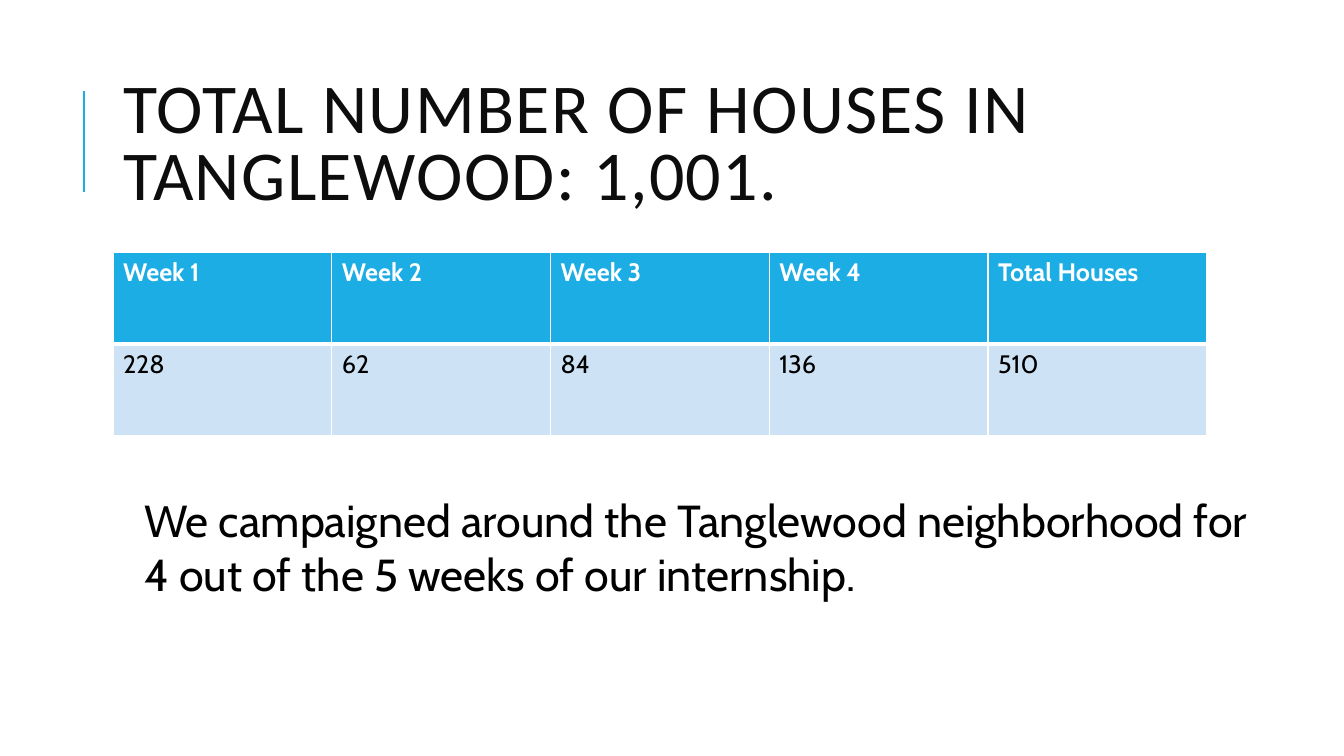
from lxml.etree import SubElement
from pptx import Presentation
from pptx.dml.color import RGBColor
from pptx.enum.shapes import MSO_CONNECTOR
from pptx.enum.text import MSO_ANCHOR, MSO_AUTO_SIZE, PP_ALIGN
from pptx.oxml.ns import qn
from pptx.util import Inches, Pt

HEAD = "Total number of houses in Tanglewood: 1,001.".upper()
NOTE = ("We campaigned around the Tanglewood neighborhood "
        "for 4 out of the 5 weeks of our internship.")
ROWS = [
    ["Week 1", "Week 2", "Week 3", "Week 4", "Total Houses"],
    ["228", "62", "84", "136", "510"],
]
BLUE = RGBColor(0x1C, 0xAD, 0xE4)
PALE = RGBColor(0xCD, 0xE3, 0xF5)
WHITE = RGBColor(0xFF, 0xFF, 0xFF)
BLACK = RGBColor(0, 0, 0)
INK = RGBColor(0x0D, 0x0D, 0x0D)
LOOKS = [
    (BLUE, WHITE, True, {"L": 1, "R": 1, "T": 1, "B": 3}),
    (PALE, BLACK, False, {"L": 1, "R": 1, "T": 3, "B": 1}),
]
WIDE, HIGH = 2.17, 0.91


def style(para, face, size, color, bold=False):
    font = para.font
    font.name, font.size, font.bold = face, Pt(size), bold
    font.color.rgb = color


def edge(cell, sides):
    props = cell._tc.get_or_add_tcPr()
    for side, width in sides.items():
        line = SubElement(props, qn(f"a:ln{side}"), w=str(Pt(width)))
        fill = SubElement(line, qn("a:solidFill"))
        SubElement(fill, qn("a:srgbClr"), val=str(WHITE))


def add_head(slide):
    rule = slide.shapes.add_connector(
        MSO_CONNECTOR.STRAIGHT,
        Inches(0.83), Inches(1.9), Inches(0.83), Inches(0.9))
    rule.line.color.rgb = BLUE
    rule.line.width = Pt(1.5)
    SubElement(rule._element.spPr, qn("a:effectLst"))

    title = slide.shapes.title
    title.left, title.top = Inches(1.12), Inches(0.64)
    title.width, title.height = Inches(10.63), Inches(1.64)
    frame = title.text_frame
    frame.text = HEAD
    frame.word_wrap = True
    frame.auto_size = MSO_AUTO_SIZE.NONE
    frame.vertical_anchor = MSO_ANCHOR.MIDDLE
    para = frame.paragraphs[0]
    para.alignment = PP_ALIGN.LEFT
    para.line_spacing = 0.8
    style(para, "Calibri", 50, INK)
    para.runs[0]._r.get_or_add_rPr().set("spc", "100")


def add_grid(slide):
    count = len(ROWS[0])
    table = slide.shapes.add_table(
        len(ROWS), count, Inches(1.12), Inches(2.5),
        Inches(WIDE * count), Inches(HIGH * len(ROWS))).table
    for r, (row, look) in enumerate(zip(ROWS, LOOKS)):
        back, color, bold, sides = look
        for c, text in enumerate(row):
            cell = table.cell(r, c)
            cell.text = text
            edge(cell, sides)
            cell.fill.solid()
            cell.fill.fore_color.rgb = back
            style(cell.text_frame.paragraphs[0], "Cabin", 18, color, bold)


def add_note(slide):
    box = slide.shapes.add_textbox(
        Inches(1.33), Inches(4.84), Inches(11.28), Inches(1.18))
    frame = box.text_frame
    frame.word_wrap = True
    frame.auto_size = MSO_AUTO_SIZE.SHAPE_TO_FIT_TEXT
    frame.text = NOTE
    style(frame.paragraphs[0], "Cabin", 32, BLACK)


def main():
    deck = Presentation()
    deck.slide_width, deck.slide_height = Inches(13.33), Inches(7.5)
    slide = deck.slides.add_slide(deck.slide_layouts[5])
    add_head(slide)
    add_grid(slide)
    add_note(slide)
    deck.save("out.pptx")


if __name__ == "__main__":
    main()
